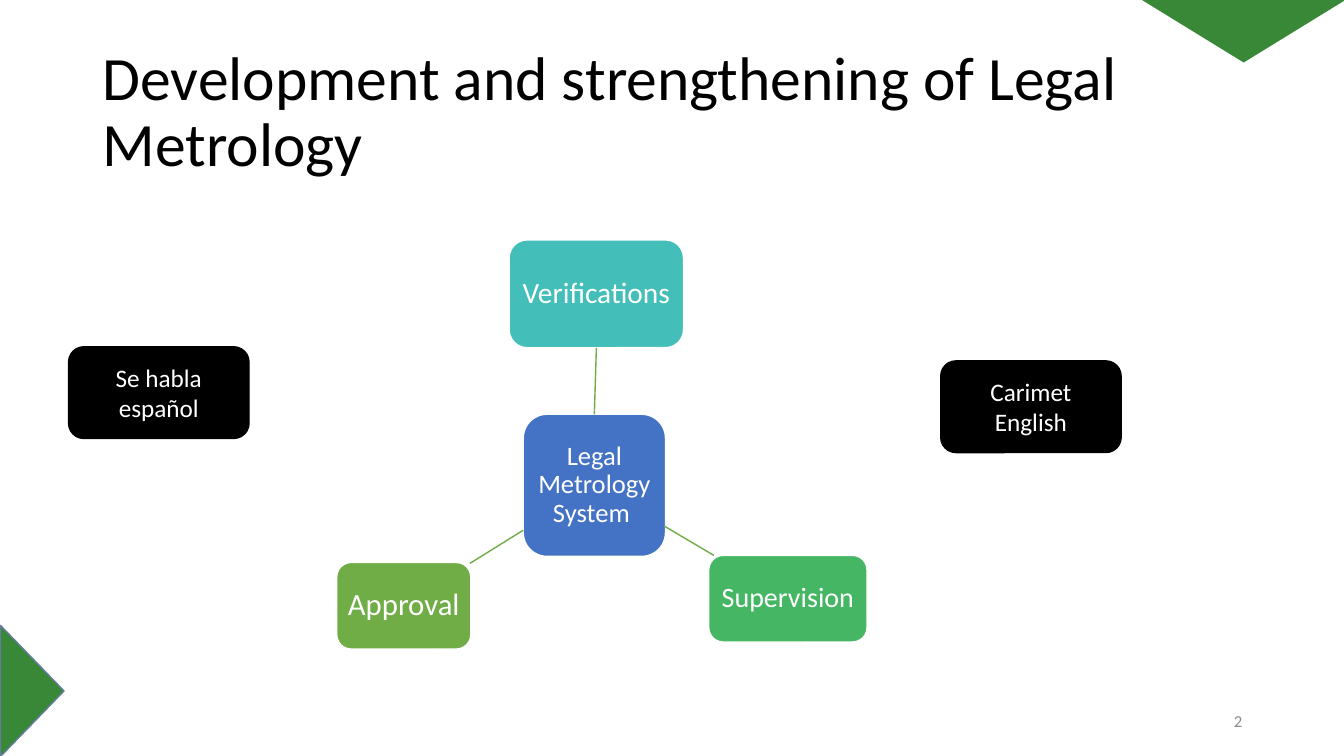
"""Build the slide on development and strengthening of Legal Metrology."""
from lxml.etree import SubElement
from pptx import Presentation
from pptx.dml.color import RGBColor
from pptx.enum.shapes import MSO_CONNECTOR, MSO_SHAPE
from pptx.enum.text import MSO_ANCHOR, PP_ALIGN
from pptx.oxml.ns import qn
from pptx.util import Inches, Pt

WHITE = RGBColor(0xFF, 0xFF, 0xFF)
BLACK = RGBColor(0x00, 0x00, 0x00)
GRAY = RGBColor(0x8C, 0x8C, 0x8C)
DARK_GREEN = RGBColor(0x38, 0x88, 0x38)
SLATE = RGBColor(0x65, 0x7D, 0x9D)
BLUE = RGBColor(0x44, 0x72, 0xC4)
TEAL = RGBColor(0x43, 0xBE, 0xB9)
MINT = RGBColor(0x45, 0xB6, 0x64)
GREEN = RGBColor(0x70, 0xAD, 0x47)
FONT = "Calibri"


def write_text(sp, lines, size, color, align, spacing=1.0, inset=0.1):
    """Fill a shape with vertically centred paragraphs."""
    tf = sp.text_frame
    tf.word_wrap = True
    tf.vertical_anchor = MSO_ANCHOR.MIDDLE
    tf.margin_left = tf.margin_right = Inches(inset)
    tf.margin_top = tf.margin_bottom = Inches(0.05)
    for i, line in enumerate(lines):
        p = tf.add_paragraph() if i else tf.paragraphs[0]
        p.alignment = align
        p.line_spacing = spacing
        r = p.add_run()
        r.text = line
        r.font.name = FONT
        r.font.size = Pt(size)
        r.font.color.rgb = color


def add_shape(slide, kind, box, fill, line=None):
    """Add a flat preset shape, outlined if a line colour is given."""
    sp = slide.shapes.add_shape(kind, *map(Inches, box))
    sp.shadow.inherit = False
    sp.fill.solid()
    sp.fill.fore_color.rgb = fill
    if line is None:
        sp.line.fill.background()
    else:
        sp.line.color.rgb = line
        sp.line.width = Pt(1)
    return sp


def add_label(slide, box, lines, size, color, align, spacing=1.0):
    """Add a text box."""
    tb = slide.shapes.add_textbox(*map(Inches, box))
    write_text(tb, lines, size, color, align, spacing)


def add_card(slide, box, lines, size, fill, line, spacing=1.0, inset=0.1):
    """Add a rounded box with centred white text."""
    sp = add_shape(slide, MSO_SHAPE.ROUNDED_RECTANGLE, box, fill, line)
    write_text(sp, lines, size, WHITE, PP_ALIGN.CENTER, spacing, inset)
    return sp


def add_spoke(slide, x1, y1, x2, y2):
    """Add a thin green line of the diagram."""
    cxn = slide.shapes.add_connector(
        MSO_CONNECTOR.STRAIGHT, *map(Inches, (x1, y1, x2, y2)))
    cxn.line.color.rgb = GREEN
    cxn.line.width = Pt(1)
    SubElement(cxn._element.spPr, qn("a:effectLst"))
    return cxn


def add_corners(slide):
    """Add the two green triangles on the slide edges."""
    top = add_shape(slide, MSO_SHAPE.FLOWCHART_EXTRACT,
                    (11.31, -0.01, 2.05, 0.63), DARK_GREEN)
    top.rotation = 180
    left = add_shape(slide, MSO_SHAPE.FLOWCHART_EXTRACT,
                     (-0.33, 6.54, 1.3, 0.63), DARK_GREEN, SLATE)
    left.rotation = 90


def add_diagram(slide, x, y):
    """Add the hub and its three satellites, from the given top left corner."""
    nodes = [
        ("Legal Metrology System ", 1.85, 1.73, 1.41, 1.41, 19, BLUE),
        ("Verifications", 1.71, 0, 1.73, 1.07, 21, TEAL),
        ("Supervision", 3.69, 3.13, 1.57, 0.86, 20, MINT),
        ("Approval", 0, 3.2, 1.33, 0.86, 22, GREEN),
    ]
    hub, verifications, *_ = [
        add_card(slide, (x + dx, y + dy, w, h), [text], size, fill, WHITE,
                 spacing=0.9, inset=0.04)
        for text, dx, dy, w, h, size, fill in nodes
    ]
    upright = add_spoke(slide, x + 2.56, y + 1.73, x + 2.57, y + 1.07)
    upright.begin_connect(hub, 0)
    upright.end_connect(verifications, 2)
    add_spoke(slide, x + 3.25, y + 2.84, x + 3.74, y + 3.13)
    add_spoke(slide, x + 1.85, y + 2.88, x + 1.32, y + 3.21)


def main():
    """Build and save the slide."""
    prs = Presentation()
    prs.slide_width, prs.slide_height = Inches(13.33), Inches(7.5)
    slide = prs.slides.add_slide(prs.slide_layouts[6])
    add_corners(slide)
    add_label(slide, (0.92, 0.4, 10.67, 1.45),
              ["Development and strengthening of Legal Metrology"],
              44, BLACK, PP_ALIGN.LEFT, 0.9)
    add_diagram(slide, 3.34, 2.38)
    add_label(slide, (9.42, 6.95, 3, 0.4), ["2"], 12, GRAY, PP_ALIGN.RIGHT)
    add_card(slide, (0.68, 3.44, 1.79, 0.91), ["Se habla español"],
             18, BLACK, BLACK)
    add_card(slide, (9.33, 3.58, 1.79, 0.91), ["Carimet", "English"],
             18, BLACK, BLACK)
    prs.save("out.pptx")


if __name__ == "__main__":
    main()
